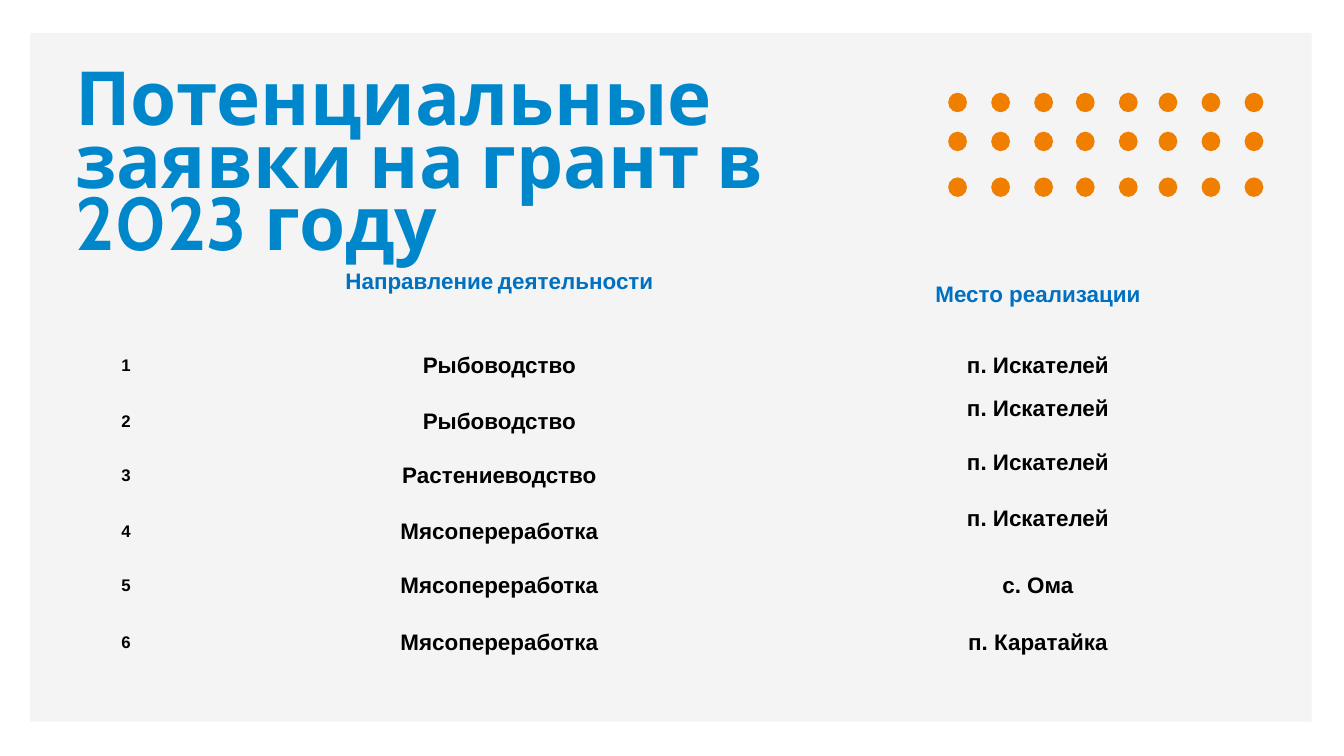
from pptx import Presentation
from pptx.dml.color import RGBColor
from pptx.enum.shapes import MSO_SHAPE as SHAPE
from pptx.enum.text import MSO_ANCHOR as ANCHOR, MSO_AUTO_SIZE as AUTO, PP_ALIGN as ALIGN
from pptx.util import Inches, Pt

PANEL = RGBColor(0xF4, 0xF4, 0xF4)
TITLE_BLUE = RGBColor(0x00, 0x87, 0xCB)
HEAD_BLUE = RGBColor(0x00, 0x70, 0xC0)
ORANGE = RGBColor(0xF0, 0x7F, 0x00)
BLACK = RGBColor(0, 0, 0)

NO_STYLE = "{2D5ABB26-0587-4C30-8999-92F81FD0307C}"
PLACE = "п. Искателей"
ROWS = [
    ("Рыбоводство", PLACE),
    ("Рыбоводство", PLACE),
    ("Растениеводство", PLACE),
    ("Мясопереработка", PLACE),
    ("Мясопереработка", "с. Ома"),
    ("Мясопереработка", "п. Каратайка"),
]
COL_WIDTHS = [1.25, 9.86, 6.17]
ROW_HEIGHTS = [1.26, 0.86, 0.78, 0.83, 0.84, 0.77, 0.93]
RAISED = {(0, 1), (2, 2), (3, 2), (4, 2)}  # cells whose text sits above the middle


def add_run(p, text, size, color, name="Arial"):
    r = p.add_run()
    r.text = text
    for key, value in {"size": Pt(size), "name": name, "bold": True}.items():
        setattr(r.font, key, value)
    r.font.color.rgb = color


def add_filled(s, kind, box, color):
    sp = s.shapes.add_shape(kind, *map(Inches, box))
    sp.shadow.inherit = False
    sp.fill.solid()
    sp.fill.fore_color.rgb = color
    sp.line.fill.background()


def add_title(s, box):
    tf = s.shapes.add_textbox(*map(Inches, box)).text_frame
    margins = {f"margin_{side}": 0 for side in ("left", "top", "right", "bottom")}
    for key, value in {**margins, "word_wrap": True,
                       "auto_size": AUTO.SHAPE_TO_FIT_TEXT}.items():
        setattr(tf, key, value)
    p = tf.paragraphs[0]
    p.line_spacing = 0.7
    add_run(p, "Потенциальные заявки на грант в 2023 году", 80, TITLE_BLUE, "Cabin")


def add_dots(s, left, top):
    # Three blocks of columns, evenly spaced inside each block
    blocks = [(0, 3), (1.9, 2), (3.13, 3)]
    xs = [start + 0.64 * i for start, count in blocks for i in range(count)]
    for y in (0, 0.58, 1.26):
        for x in xs:
            add_filled(s, SHAPE.OVAL, (left + x, top + y, 0.28, 0.29), ORANGE)


def add_cell(cell, runs, color, raised):
    cell.fill.background()
    for key, value in {"vertical_anchor": ANCHOR.MIDDLE, "margin_left": Inches(0.01),
                       "margin_right": Inches(0.01), "margin_top": Inches(0.01),
                       "margin_bottom": Inches(0.38 if raised else 0)}.items():
        setattr(cell, key, value)
    p = cell.text_frame.paragraphs[0]
    p.alignment = ALIGN.CENTER
    for text, size in runs:
        add_run(p, text, size, color)


def add_applications(s, left, top):
    box = (left, top, sum(COL_WIDTHS), sum(ROW_HEIGHTS))
    table = s.shapes.add_table(len(ROW_HEIGHTS), len(COL_WIDTHS),
                               *map(Inches, box)).table
    # Plain table without style borders or bands
    table.first_row = table.horz_banding = False
    table._tbl.tblPr.find("{*}tableStyleId").text = NO_STYLE
    for col, width in zip(table.columns, COL_WIDTHS):
        col.width = Inches(width)
    for row, height in zip(table.rows, ROW_HEIGHTS):
        row.height = Inches(height)

    header = [[], [("Направление", 24), (" ", 18), ("деятельности", 24)],
              [("Место реализации", 24)]]
    body = [[[(str(n), 18)], [(activity, 24)], [(place, 24)]]
            for n, (activity, place) in enumerate(ROWS, 1)]
    for i, row in enumerate([header] + body):
        for j, runs in enumerate(row):
            add_cell(table.cell(i, j), runs, BLACK if i else HEAD_BLUE, (i, j) in RAISED)


def main():
    prs = Presentation()
    prs.slide_width, prs.slide_height = Inches(20), Inches(11.25)
    s = prs.slides.add_slide(prs.slide_layouts[6])
    add_filled(s, SHAPE.RECTANGLE, (0.45, 0.49, 19.07, 10.25), PANEL)
    add_title(s, (1.12, 1.12, 12.07, 1.88))
    add_dots(s, 14.11, 1.38)
    add_applications(s, 1.25, 3.75)
    prs.save("out.pptx")


if __name__ == "__main__":
    main()
